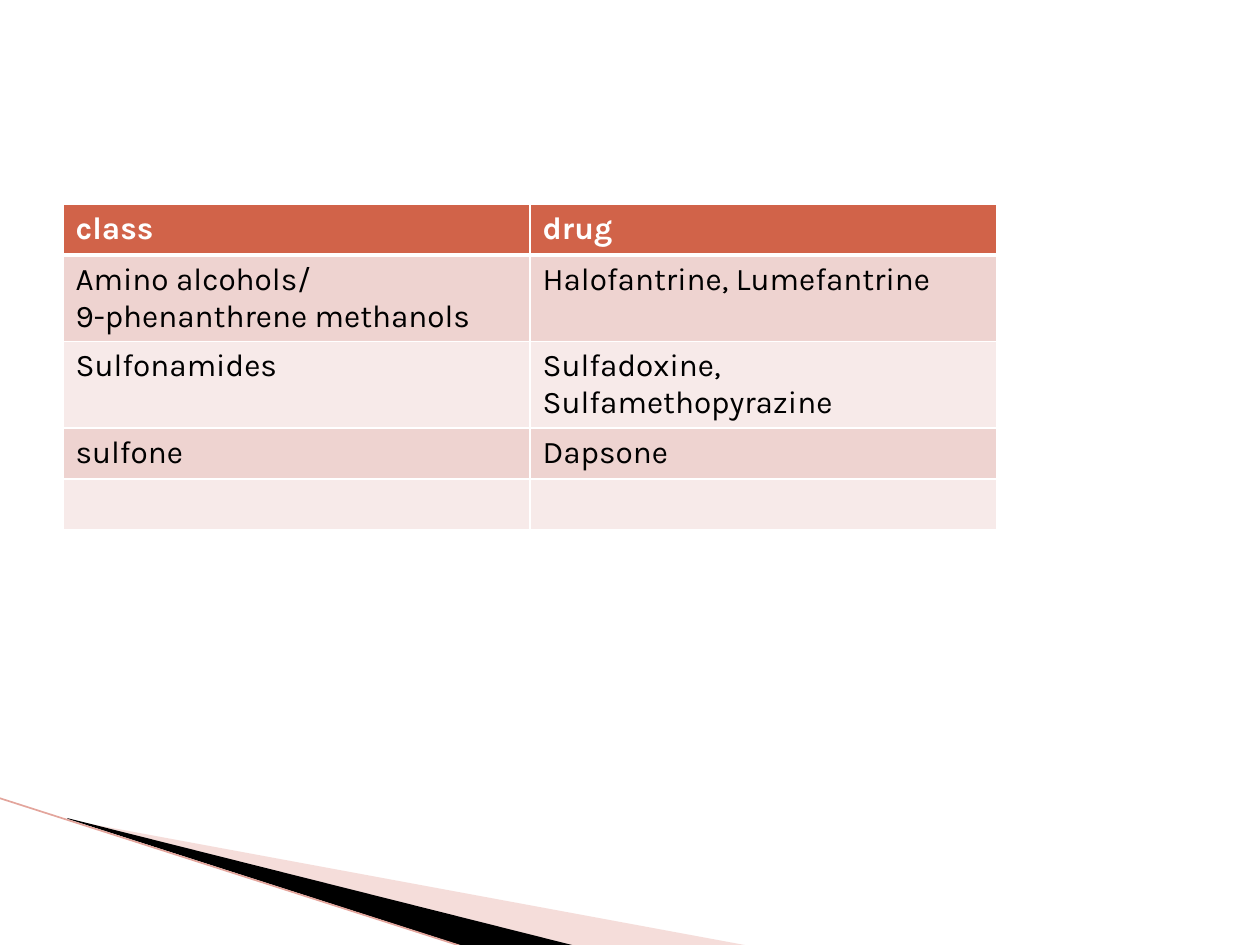
from lxml import etree
from pptx import Presentation, util as u
from pptx.dml.color import RGBColor
from pptx.enum import shapes
from pptx.oxml import ns

PX = u.Inches(1) / 126


def px(count):
    """Turn whole pixels into EMU."""
    return u.Emu(round(count * PX))


def rgb(code):
    return RGBColor.from_string(code)


deck = Presentation()
deck.slide_width, deck.slide_height = px(1260), px(945)
page = deck.slides.add_slide(deck.slide_layouts[6])

# Wedges in the lower left corner: points, colour, opacity in percent
wedges = [
    ([(69, 820), (750, 946), (575, 946), (69, 819)], "E7ACA4", 40),
    ([(67, 818), (576, 946), (469, 948), (68, 819)], "000000", 100),
]
for points, color, opacity in wedges:
    builder = page.shapes.build_freeform(*points[0], scale=PX)
    builder.add_line_segments(points[1:], close=True)
    wedge = builder.convert_to_shape()
    wedge.shadow.inherit = False
    wedge.line.fill.background()
    wedge.fill.solid()
    wedge.fill.fore_color.rgb = rgb(color)
    if opacity < 100:
        tint = wedge.fill._xPr.find(".//" + ns.qn("a:srgbClr"))
        etree.SubElement(tint, ns.qn("a:alpha"), val=str(opacity * 1000))

edge = page.shapes.add_connector(
    shapes.MSO_CONNECTOR.STRAIGHT, px(-1), px(798), px(467), px(948))
edge.line.color.rgb = rgb("E3A59C")
edge.line.width = u.Pt(0.95)
etree.SubElement(edge._element.spPr, ns.qn("a:effectLst"))

# Table of drug classes; each cell is a list of paragraphs
rows = [
    (["class"], ["drug"]),
    (["Amino alcohols/", "9-phenanthrene methanols"], ["Halofantrine, Lumefantrine"]),
    (["Sulfonamides"], ["Sulfadoxine, Sulfamethopyrazine"]),
    (["sulfone\u00a0"], ["Dapsone"]),
    ([], []),
]
table = page.shapes.add_table(
    len(rows), 2, px(63), px(204), px(934), px(51 * len(rows))).table
for column in table.columns:
    column.width = px(467)

for r, row in enumerate(rows):
    header = r == 0
    table.rows[r].height = px(51)
    for c, lines in enumerate(row):
        cell = table.cell(r, c)
        props = cell._tc.get_or_add_tcPr()
        for side in "LRTB":
            thick = (header and side == "B") or (r == 1 and side == "T")
            border = etree.SubElement(
                props, ns.qn("a:ln" + side), w=str(u.Pt(3 if thick else 1)))
            fill = etree.SubElement(border, ns.qn("a:solidFill"))
            etree.SubElement(fill, ns.qn("a:srgbClr"), val="FFFFFF")
        cell.fill.solid()
        band = "EED3D0" if r % 2 else "F7EAE9"
        cell.fill.fore_color.rgb = rgb("D16349" if header else band)
        for i, line in enumerate(lines):
            frame = cell.text_frame
            para = frame.add_paragraph() if i else frame.paragraphs[0]
            span = para.add_run()
            span.text = line
            span.font.name = "Karla"
            span.font.size = u.Pt(18)
            span.font.bold = header
            span.font.color.rgb = rgb("FFFFFF" if header else "000000")

deck.save("out.pptx")
